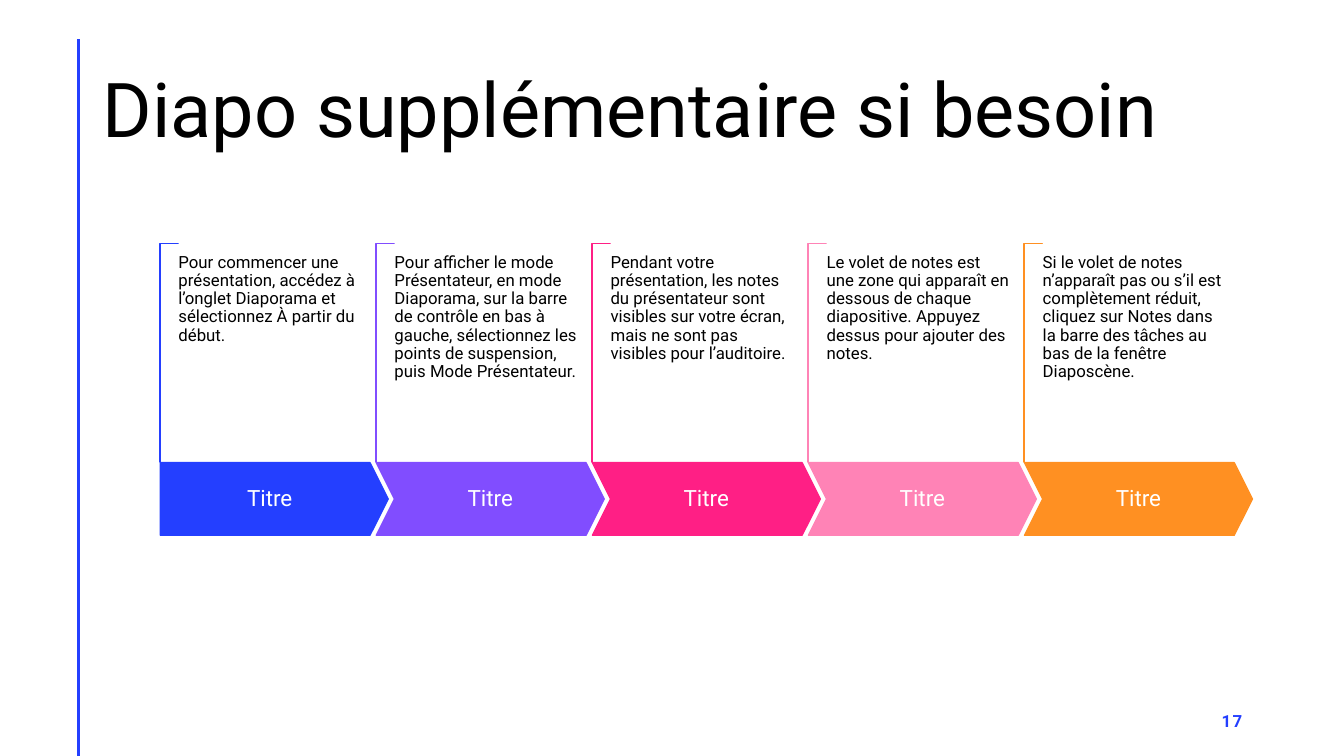
from dataclasses import dataclass

from lxml.etree import SubElement
from pptx import Presentation
from pptx.dml.color import RGBColor
from pptx.enum.shapes import MSO_CONNECTOR, MSO_SHAPE
from pptx.enum.text import MSO_ANCHOR, MSO_AUTO_SIZE, PP_ALIGN
from pptx.oxml.ns import qn
from pptx.util import Inches, Pt


@dataclass(frozen=True)
class Theme:
    font: str = "Roboto"
    black: str = "000000"
    white: str = "FFFFFF"
    blue: str = "243FFF"
    violet: str = "814DFF"
    red: str = "FF1F85"
    pink: str = "FF83B6"
    orange: str = "FF9022"
    title: int = 54
    label: int = 16
    body: int = 12


THEME = Theme()
LEFT, STEP = 1.59, 2.143
INDENT = 0.18

STEPS = [
    (THEME.blue, "Pour commencer une présentation, accédez à l’onglet Diaporama "
     "et sélectionnez À partir du début."),
    (THEME.violet, "Pour afficher le mode Présentateur, en mode Diaporama, sur la "
     "barre de contrôle en bas à gauche, sélectionnez les points de suspension, "
     "puis Mode Présentateur."),
    (THEME.red, "Pendant votre présentation, les notes du présentateur sont "
     "visibles sur votre écran, mais ne sont pas visibles pour l’auditoire."),
    (THEME.pink, "Le volet de notes est une zone qui apparaît en dessous de chaque "
     "diapositive. Appuyez dessus pour ajouter des notes."),
    (THEME.orange, "Si le volet de notes n’apparaît pas ou s’il est complètement "
     "réduit, cliquez sur Notes dans la barre des tâches au bas de la fenêtre "
     "Diaposcène."),
]


def color(code):
    return RGBColor.from_string(code)


def write(frame, text, size, ink, align=PP_ALIGN.LEFT, anchor=MSO_ANCHOR.MIDDLE,
          bold=False):
    """Fill a text frame with one styled paragraph and return it."""
    frame.text = text
    frame.word_wrap = True
    frame.auto_size = MSO_AUTO_SIZE.NONE
    frame.vertical_anchor = anchor
    para = frame.paragraphs[0]
    para.alignment = align
    para.line_spacing = 0.9
    para.font.name = THEME.font
    para.font.size = Pt(size)
    para.font.bold = bold
    para.font.color.rgb = color(ink)
    return para


def add_title(slide, text):
    title = slide.shapes.title
    title.left, title.top = Inches(0.92), Inches(0.4)
    title.width, title.height = Inches(11.5), Inches(1.45)
    write(title.text_frame, text, THEME.title, THEME.black)


def add_rule(slide):
    rule = slide.shapes.add_connector(
        MSO_CONNECTOR.STRAIGHT, Inches(0.78), Inches(0.39), Inches(0.78), Inches(7.5))
    rule.line.color.rgb = color(THEME.blue)
    rule.line.width = Pt(2)
    SubElement(rule._element.spPr, qn("a:effectLst"))


def add_number(slide, text):
    box = slide.shapes.add_textbox(Inches(9.42), Inches(6.95), Inches(3), Inches(0.4))
    para = write(box.text_frame, text, THEME.body, THEME.blue, PP_ALIGN.RIGHT, bold=True)
    para.line_spacing = 1
    para.runs[0].font._element.set("spc", "100")


def add_form(slide, kind, x, y, wide, high, fill, line, adjust):
    form = slide.shapes.add_shape(kind, Inches(x), Inches(y), Inches(wide), Inches(high))
    form.shadow.inherit = False
    form.fill.solid()
    form.fill.fore_color.rgb = color(fill)
    form.line.color.rgb = color(line)
    form.line.width = Pt(1)
    for index, value in enumerate(adjust):
        form.adjustments[index] = value
    return form


def add_step(slide, x, kind, tint, label, text):
    """Add a bracket, an arrow with its label, and the note above it."""
    bracket = add_form(slide, MSO_SHAPE.CORNER, x - 1, 3.41, 2.17, INDENT,
                       THEME.white, tint, (0.01, 0.01))
    bracket.rotation = 90

    arrow = add_form(slide, kind, x, 4.59, 2.26, 0.72, tint, tint, (0.25,))
    write(arrow.text_frame, label, THEME.label, THEME.white, PP_ALIGN.CENTER)

    note = slide.shapes.add_textbox(
        Inches(x + INDENT), Inches(2.52), Inches(1.83), Inches(1.55))
    frame = note.text_frame
    frame.margin_left = frame.margin_right = 0
    frame.margin_top = frame.margin_bottom = 0
    write(frame, text, THEME.body, THEME.black, anchor=MSO_ANCHOR.TOP)


def main():
    deck = Presentation()
    deck.slide_width, deck.slide_height = Inches(13.33), Inches(7.5)
    slide = deck.slides.add_slide(deck.slide_layouts[5])

    add_rule(slide)
    add_title(slide, "Diapo supplémentaire si besoin")
    add_number(slide, "17")
    for index, (tint, text) in enumerate(STEPS):
        kind = MSO_SHAPE.CHEVRON if index else MSO_SHAPE.PENTAGON
        add_step(slide, LEFT + index * STEP, kind, tint, "Titre", text)

    deck.save("out.pptx")


if __name__ == "__main__":
    main()
